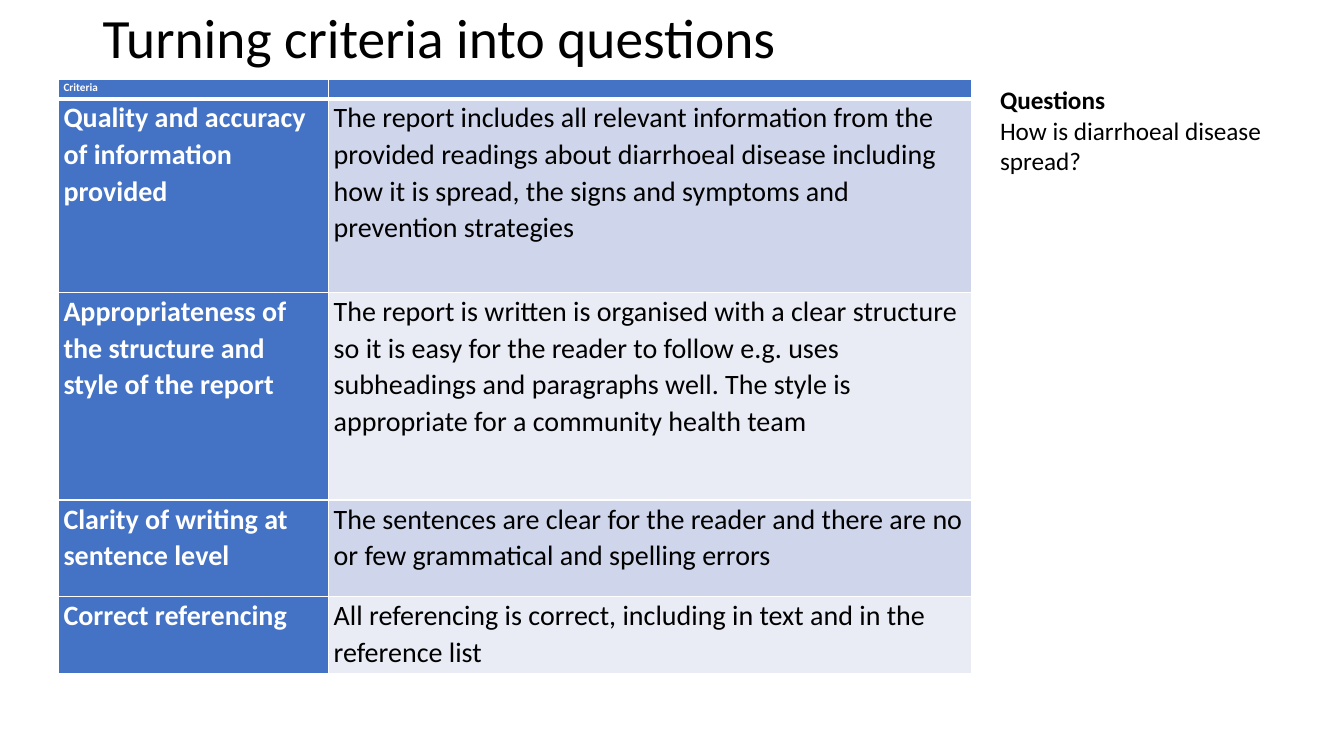
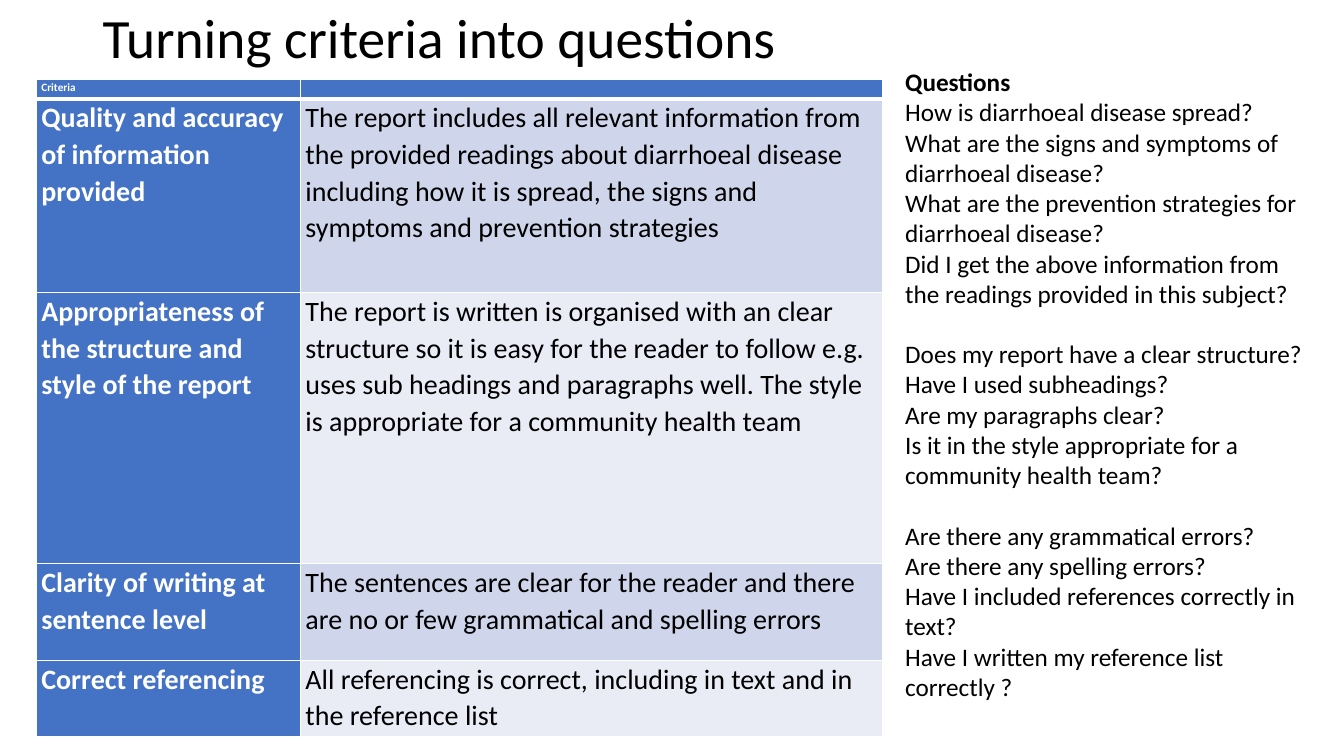
from dataclasses import dataclass
from typing import Any

from lxml import etree
from pptx import Presentation
from pptx.dml.color import RGBColor
from pptx.enum.text import MSO_ANCHOR, MSO_AUTO_SIZE
from pptx.oxml.ns import qn
from pptx.util import Emu, Pt

ANCHOR_TOP = MSO_ANCHOR.TOP
ANCHOR_MIDDLE = MSO_ANCHOR.MIDDLE
NO_AUTOFIT = MSO_AUTO_SIZE.NONE
EMU_PER_PX = 9144
SLIDE_SIZE = (1333, 750)
BLANK_LAYOUT = 6
TITLE = "Turning criteria into questions"


@dataclass(frozen=True)
class Theme:
    font: str = "Calibri"
    text: str = "000000"
    light: str = "FFFFFF"
    accent: str = "4472C4"
    bands: tuple[str, str] = ("CFD5EA", "E9EBF5")
    title_size: float = 39.6
    header_size: float = 8
    criteria_size: float = 20
    question_size: float = 18
    thin_rule: float = 1
    header_rule: float = 3


@dataclass(frozen=True)
class Box:
    left: int
    top: int
    width: int
    height: int


@dataclass(frozen=True)
class Criterion:
    name: str
    standard: str


@dataclass(frozen=True)
class CriteriaSlide:
    table_left: int
    columns: tuple[int, int]
    rows: tuple[int, ...]
    criteria: tuple[Criterion, ...]
    questions_box: Box
    question_groups: tuple[tuple[str, ...], ...]


THEME = Theme()
TITLE_BOX = Box(92, 19, 1150, 42)
TABLE_TOP = 79
TITLE_FORMAT = {"line_spacing": 0.9}
CELL_FORMAT = {"line_spacing": 1.07, "space_after": Pt(8)}
GROUP_FORMAT = {"space_before": Pt(21.6)}


def px(length: int) -> Emu:
    return Emu(length * EMU_PER_PX)


CELL_MARGINS = {
    "margin_left": px(5),
    "margin_right": px(5),
    "margin_top": px(0),
    "margin_bottom": px(0),
    "vertical_anchor": ANCHOR_TOP,
}


def report_criteria(article: str, subheadings: str) -> tuple[Criterion, ...]:
    return (
        Criterion(
            "Quality and accuracy of information provided",
            "The report includes all relevant information from the provided readings "
            "about diarrhoeal disease including how it is spread, the signs and "
            "symptoms and prevention strategies",
        ),
        Criterion(
            "Appropriateness of the structure and style of the report",
            f"The report is written is organised with {article} clear structure so it "
            f"is easy for the reader to follow e.g. uses {subheadings} and paragraphs "
            "well. The style is appropriate for a community health team",
        ),
        Criterion(
            "Clarity of writing at sentence level",
            "The sentences are clear for the reader and there are no or few "
            "grammatical and spelling errors",
        ),
        Criterion(
            "Correct referencing",
            "All referencing is correct, including in text and in the reference list",
        ),
    )


SPREAD_QUESTION = "How is diarrhoeal disease spread?"

SLIDES = (
    CriteriaSlide(
        58,
        (268, 638),
        (19, 192, 206, 96, 76),
        report_criteria("a", "subheadings"),
        Box(982, 79, 352, 131),
        ((SPREAD_QUESTION,),),
    ),
    CriteriaSlide(
        36,
        (262, 577),
        (19, 192, 269, 96, 76),
        report_criteria("an", "sub headings"),
        Box(888, 61, 428, 646),
        (
            (
                SPREAD_QUESTION,
                "What are the signs and symptoms of diarrhoeal disease?",
                "What are the prevention strategies for diarrhoeal disease?",
                "Did I get the above information from the readings provided in this subject?",
            ),
            (
                "Does my report have a clear structure?",
                "Have I used subheadings?",
                "Are my paragraphs clear?",
                "Is it in the style appropriate for a community health team?",
            ),
            (
                "Are there any grammatical errors?",
                "Are there any spelling errors?",
                "Have I included references correctly in text?",
                "Have I written my reference list correctly ?",
            ),
        ),
    ),
)


def apply_format(target: Any, values: dict[str, Any]) -> None:
    for attribute, value in values.items():
        setattr(target, attribute, value)


def write(
    paragraph: Any,
    text: str,
    size: float,
    color: str = THEME.text,
    bold: bool = False,
    layout: dict[str, Any] | None = None,
) -> None:
    apply_format(paragraph, layout or {})
    if not text:
        end = etree.SubElement(paragraph._p, qn("a:endParaRPr"))
        end.set("sz", str(int(size * 100)))
        return
    run = paragraph.add_run()
    run.text = text
    apply_format(run.font, {"name": THEME.font, "size": Pt(size), "bold": bold})
    run.font.color.rgb = RGBColor.from_string(color)


def add_text_frame(slide: Any, box: Box, anchor: Any) -> Any:
    frame = slide.shapes.add_textbox(
        px(box.left), px(box.top), px(box.width), px(box.height)
    ).text_frame
    apply_format(
        frame, {"word_wrap": True, "auto_size": NO_AUTOFIT, "vertical_anchor": anchor}
    )
    return frame


def add_title(slide: Any) -> None:
    frame = add_text_frame(slide, TITLE_BOX, ANCHOR_MIDDLE)
    write(frame.paragraphs[0], TITLE, THEME.title_size, layout=TITLE_FORMAT)


def add_borders(cell: Any, top: float, bottom: float) -> None:
    properties = cell._tc.get_or_add_tcPr()
    widths = {"L": THEME.thin_rule, "R": THEME.thin_rule, "T": top, "B": bottom}
    for side, width in widths.items():
        line = etree.SubElement(properties, qn(f"a:ln{side}"), w=str(Pt(width)))
        fill = etree.SubElement(line, qn("a:solidFill"))
        etree.SubElement(fill, qn("a:srgbClr"), val=THEME.light)


def fill_cell(cell: Any, text: str, row: int, column: int) -> None:
    is_header = row == 0
    is_label = is_header or column == 0
    apply_format(cell, CELL_MARGINS)
    add_borders(
        cell,
        THEME.header_rule if row == 1 else THEME.thin_rule,
        THEME.header_rule if is_header else THEME.thin_rule,
    )
    cell.fill.solid()
    background = THEME.accent if is_label else THEME.bands[(row - 1) % 2]
    cell.fill.fore_color.rgb = RGBColor.from_string(background)
    write(
        cell.text_frame.paragraphs[0],
        text,
        THEME.header_size if is_header else THEME.criteria_size,
        THEME.light if is_label else THEME.text,
        is_label,
        CELL_FORMAT,
    )


def add_criteria_table(slide: Any, content: CriteriaSlide) -> None:
    table = slide.shapes.add_table(
        len(content.rows),
        len(content.columns),
        px(content.table_left),
        px(TABLE_TOP),
        px(sum(content.columns)),
        px(sum(content.rows)),
    ).table
    apply_format(table, {"first_row": False, "horz_banding": False})
    for column, width in zip(table.columns, content.columns):
        column.width = px(width)
    for row, height in zip(table.rows, content.rows):
        row.height = px(height)
    texts = [("Criteria", "")] + [(c.name, c.standard) for c in content.criteria]
    for row_index, row_texts in enumerate(texts):
        for column_index, text in enumerate(row_texts):
            cell = table.cell(row_index, column_index)
            fill_cell(cell, text, row_index, column_index)


def add_questions(slide: Any, content: CriteriaSlide) -> None:
    frame = add_text_frame(slide, content.questions_box, ANCHOR_TOP)
    write(frame.paragraphs[0], "Questions", THEME.question_size, bold=True)
    for group_index, questions in enumerate(content.question_groups):
        for question_index, question in enumerate(questions):
            starts_group = group_index > 0 and question_index == 0
            write(
                frame.add_paragraph(),
                question,
                THEME.question_size,
                layout=GROUP_FORMAT if starts_group else None,
            )


def main() -> None:
    presentation = Presentation()
    width, height = SLIDE_SIZE
    apply_format(
        presentation, {"slide_width": px(width), "slide_height": px(height)}
    )
    for content in SLIDES:
        slide = presentation.slides.add_slide(presentation.slide_layouts[BLANK_LAYOUT])
        add_title(slide)
        add_criteria_table(slide, content)
        add_questions(slide, content)
    presentation.save("out.pptx")


if __name__ == "__main__":
    main()
